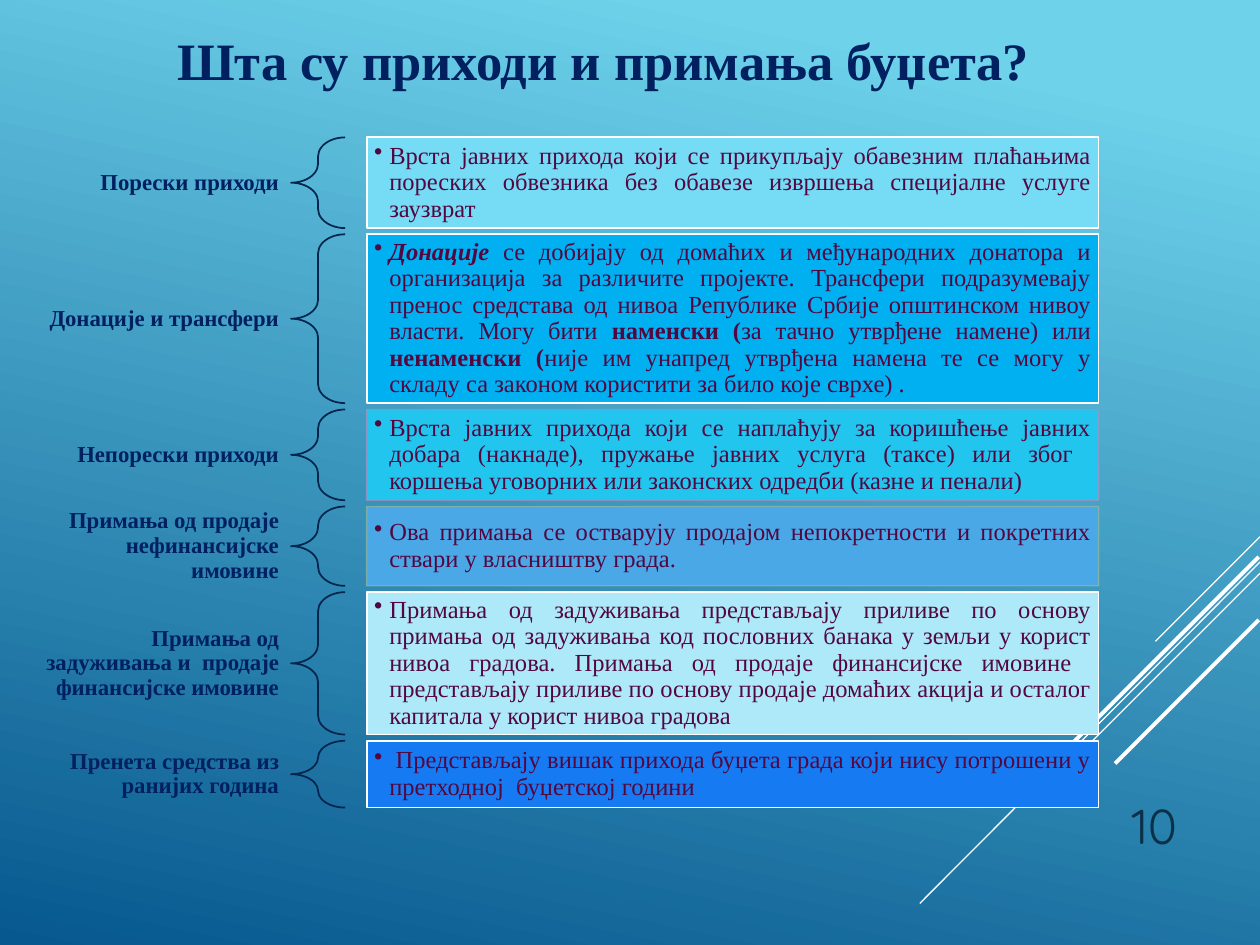
from lxml.etree import SubElement
from pptx import Presentation
from pptx.dml.color import RGBColor
from pptx.enum.shapes import MSO_CONNECTOR, MSO_SHAPE
from pptx.enum.text import MSO_ANCHOR, PP_ALIGN
from pptx.oxml.ns import qn
from pptx.util import Inches, Pt

WHITE = RGBColor(0xFF, 0xFF, 0xFF)
NAVY = RGBColor(0x00, 0x20, 0x60)
INK = RGBColor(0x04, 0x26, 0x4E)
PLUM = RGBColor(0x52, 0x07, 0x41)
SLATE = RGBColor(0x0A, 0x30, 0x4A)
LIGHT = RGBColor(0x6E, 0xD2, 0xEB)
DEEP = RGBColor(0x06, 0x58, 0x8E)
MAUVE = RGBColor(0xC0, 0x89, 0xBD)
SAGE = RGBColor(0xA4, 0xBB, 0x8B)
AQUA = RGBColor(0x76, 0xDB, 0xF4)
AZURE = RGBColor(0x00, 0xB0, 0xF0)
CYAN = RGBColor(0x22, 0xC5, 0xED)
SKY = RGBColor(0x4A, 0xA8, 0xE7)
PALE = RGBColor(0xAD, 0xE9, 0xF8)
BLUE = RGBColor(0x16, 0x7B, 0xF3)

SERIF = "Times New Roman"
TITLE = "Шта су приходи и примања буџета?"
NUMBER = "10"

# label, label height, row height, fill, edge, runs as (text, style)
ROWS = [
    ("Порески приходи", 0.28, 0.72, AQUA, WHITE, [
        ("Врста јавних прихода који се прикупљају обавезним плаћањима "
         "пореских обвезника без обавезе извршења специјалне услуге "
         "заузврат", "")]),
    ("Донације и трансфери", 0.28, 1.34, AZURE, WHITE, [
        ("Донације ", "bi"),
        ("се добијају од домаћих и међународних донатора и организација за "
         "различите пројекте. Трансфери подразумевају пренос средстава од "
         "нивоа Републике Србије општинском нивоу власти. Могу бити ", ""),
        ("наменски (", "b"),
        ("за тачно утврђене намене) или ", ""),
        ("ненаменски (", "b"),
        ("није им унапред утврђена намена те се могу у складу са законом "
         "користити за било које сврхе) .", "")]),
    ("Непорески приходи", 0.28, 0.72, CYAN, MAUVE, [
        ("Врста јавних прихода који се наплаћују за коришћење јавних добара "
         "(накнаде), пружање јавних услуга (таксе) или због  коршења "
         "уговорних или законских одредби (казне и пенали)", "")]),
    ("Примања од продаје нефинансијске имовине", 0.63, 0.63, SKY, SAGE, [
        ("Ова примања се остварују продајом непокретности и покретних "
         "ствари у власништву града.", "")]),
    ("Примања од задуживања и  продаје финансијске имовине", 0.63, 1.13,
     PALE, WHITE, [
        ("Примања од задуживања представљају приливе по основу примања од "
         "задуживања код пословних банака у земљи у корист нивоа градова. "
         "Примања од продаје финансијске имовине  представљају приливе по "
         "основу продаје домаћих акција и осталог капитала у корист нивоа "
         "градова", "")]),
    ("Пренета средства из ранијих година", 0.45, 0.53, BLUE, WHITE, [
        (" Представљају вишак прихода буџета града који нису потрошени у "
         "претходној  буџетској години", "")]),
]
TOP, GAP = 1.09, 0.05

RAYS = [
    (10, 4.26, 9.17, 5.09, 0.75),
    (10, 4.46, 7.3, 7.17, 0.75),
    (10, 4.55, 8.28, 6.27, 0.75),
    (9.99, 4.42, 8.42, 5.99, 2.25),
    (9.99, 4.92, 8.85, 6.06, 2.25),
]

deck = Presentation()
deck.slide_width, deck.slide_height = Inches(10), Inches(7.5)
slide = deck.slides.add_slide(deck.slide_layouts[6])
shapes = slide.shapes


def paint():
    fill = slide.background.fill
    fill.gradient()
    fill.gradient_angle = 258
    for stop, color, pos in zip(fill.gradient_stops, (LIGHT, DEEP), (0.1, 1)):
        stop.color.rgb = color
        stop.position = pos


def add_ray(x1, y1, x2, y2, width):
    ray = shapes.add_connector(
        MSO_CONNECTOR.STRAIGHT, *map(Inches, (x1, y1, x2, y2)))
    ray.line.color.rgb = WHITE
    ray.line.width = Pt(width)
    SubElement(ray._element.spPr, qn("a:effectLst"))


def add_form(kind, box, edge, width):
    form = shapes.add_shape(kind, *map(Inches, box))
    form.shadow.inherit = False
    form.fill.background()
    form.line.color.rgb = edge
    form.line.width = Pt(width)
    return form


def write(form, runs, size, color, align, anchor, pad=(0.1, 0.05), font=SERIF):
    frame = form.text_frame
    frame.word_wrap = True
    frame.vertical_anchor = anchor
    frame.margin_left = frame.margin_right = Inches(pad[0])
    frame.margin_top = frame.margin_bottom = Inches(pad[1])
    para = frame.paragraphs[0]
    para.alignment = align
    for text, style in runs:
        run = para.add_run()
        run.text = text
        run.font.name = font
        run.font.size = Pt(size)
        run.font.color.rgb = color
        run.font.bold = "b" in style
        run.font.italic = "i" in style
    return para


def add_text(box, *args, **opts):
    return write(shapes.add_textbox(*map(Inches, box)), *args, **opts)


def add_row(top, label, tall, high, fill, edge, runs):
    para = add_text((0.17, top + (high - tall) / 2, 2.14, tall),
                    [(label, "b")], 13, NAVY, PP_ALIGN.RIGHT,
                    MSO_ANCHOR.MIDDLE, pad=(0.1, 0.04))
    para.line_spacing = 0.9

    brace = add_form(MSO_SHAPE.LEFT_BRACE, (2.31, top, 0.43, high), INK, 1)
    brace.adjustments[0] = 0.35

    soft = edge != WHITE
    card = add_form(MSO_SHAPE.RECTANGLE, (2.91, top, 5.81, high),
                    edge, 0.75 if soft else 1)
    card.fill.solid()
    card.fill.fore_color.rgb = fill
    if soft:
        tint = card.line._ln.find(".//" + qn("a:srgbClr"))
        SubElement(tint, qn("a:alpha"), val="60000")
    para = write(card, runs, 14, PLUM, PP_ALIGN.JUSTIFY,
                 MSO_ANCHOR.MIDDLE, pad=(0.06, 0.06))
    para.line_spacing = 0.9
    props = para._p.get_or_add_pPr()
    props.set("marL", str(Inches(0.12)))
    props.set("indent", str(Inches(-0.12)))
    SubElement(props, qn("a:buChar"), char="•")


paint()
for ray in RAYS:
    add_ray(*ray)
top = TOP
for row in ROWS:
    add_row(top, *row)
    top += row[2] + GAP
add_text((8.5, 6.1, 0.94, 0.73), [(NUMBER, "")], 28, SLATE,
         PP_ALIGN.RIGHT, MSO_ANCHOR.BOTTOM, font="Quicksand")
add_text((0.58, 0.17, 8.42, 0.61), [(TITLE, "b")], 30, NAVY,
         PP_ALIGN.CENTER, MSO_ANCHOR.TOP)
deck.save("out.pptx")
